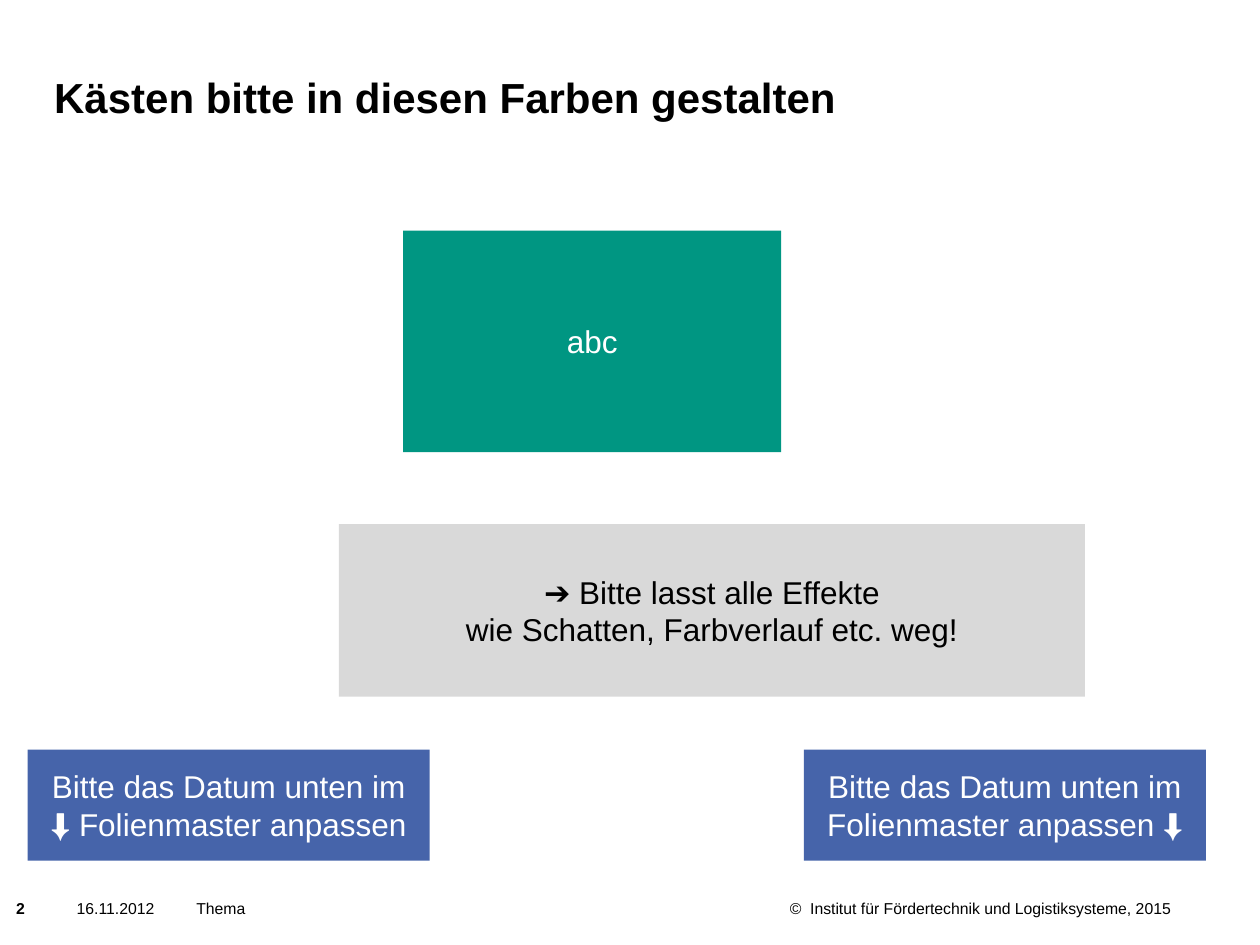
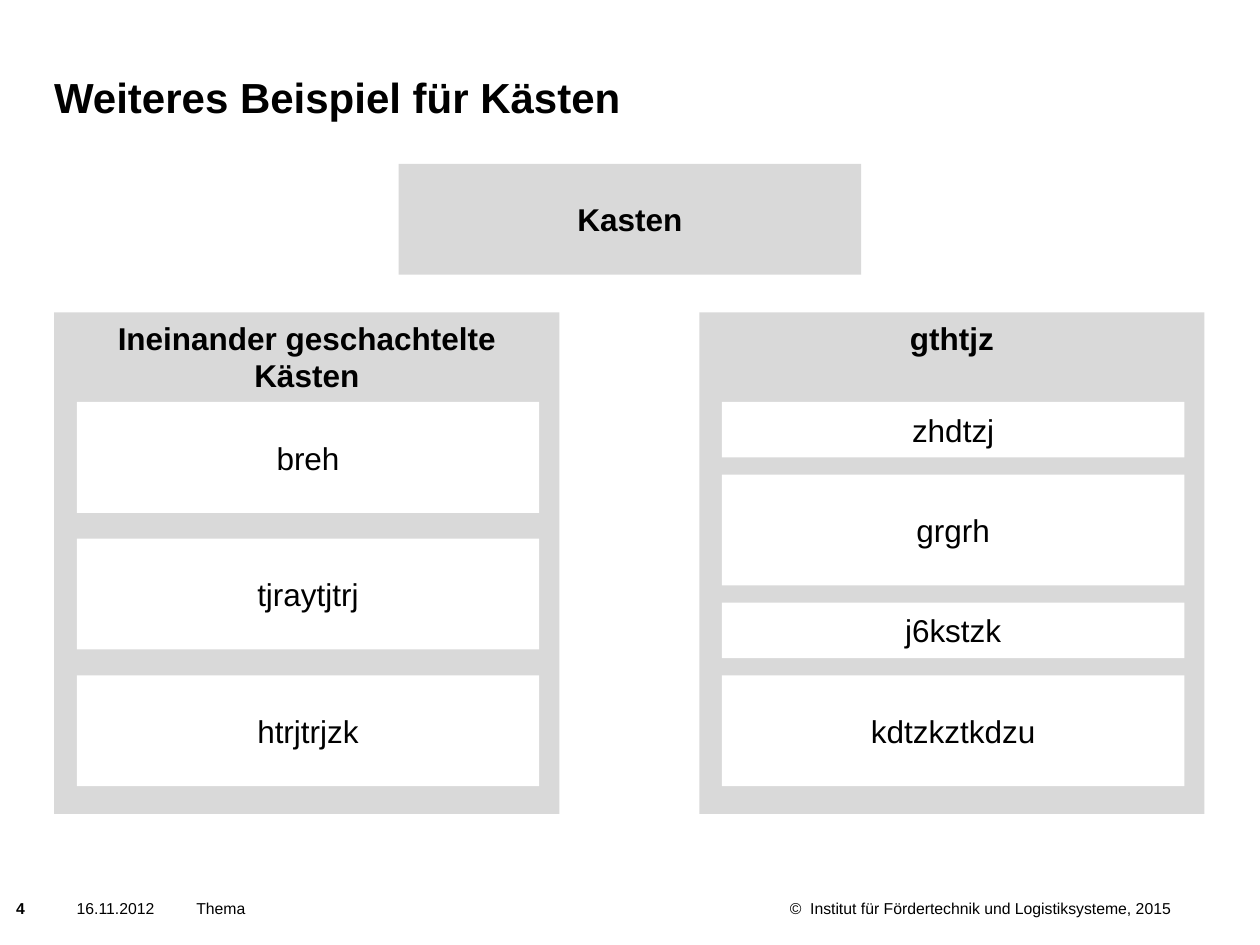
import dataclasses

import pptx
import pptx.dml.color
import pptx.enum.shapes
import pptx.enum.text
import pptx.util

# Grid: 100 columns by 75 rows, one cell is a tenth of an inch
CELL = pptx.util.Inches(0.1)
COLUMNS, ROWS = 100, 75

FONT = "Arial"
BLACK, WHITE, GREY = "000000", "FFFFFF", "D9D9D9"
GREEN, BLUE = "009682", "4664AA"
TITLE_SIZE, BODY_SIZE, FOOTER_SIZE = 24, 18, 9

# Sizes that the boxes share
BOX_WIDTH, BOX_HEIGHT = 36.7, 8.8
PANEL_INSET, PANEL_HEADER, PANEL_FOOT = 1.8, 7.1, 2.2

ANCHOR = pptx.enum.text.MSO_ANCHOR
ALIGN = pptx.enum.text.PP_ALIGN


@dataclasses.dataclass
class Box:
    left: float
    top: float
    width: float
    height: float

    def inner(self, left, top, width, height):
        return Box(self.left + left, self.top + top, width, height)

    def lengths(self):
        return [round(value * CELL)
                for value in (self.left, self.top, self.width, self.height)]


SLIDE = Box(0, 0, COLUMNS, ROWS)
TITLE = Box(4.3, 3.6, 75.6, 6.1)
FOOTER = Box(0, 70.8, COLUMNS, 2.5)


def color(hex_string):
    return pptx.dml.color.RGBColor.from_string(hex_string)


def write(shape, text, size, hex_string, bold=False, align=ALIGN.LEFT,
          anchor=ANCHOR.MIDDLE):
    frame = shape.text_frame
    frame.word_wrap = True
    frame.vertical_anchor = anchor
    frame.text = text
    for paragraph in frame.paragraphs:
        paragraph.alignment = align
        for run in paragraph.runs:
            run.font.name = FONT
            run.font.size = pptx.util.Pt(size)
            run.font.bold = bold
            run.font.color.rgb = color(hex_string)


def add_text(slide, box, text, size, bold=False, anchor=ANCHOR.MIDDLE):
    shape = slide.shapes.add_textbox(*box.lengths())
    write(shape, text, size, BLACK, bold, anchor=anchor)
    return shape


def add_box(slide, box, text, fill, text_color=BLACK, bold=False,
            anchor=ANCHOR.MIDDLE):
    shape = slide.shapes.add_shape(
        pptx.enum.shapes.MSO_SHAPE.RECTANGLE, *box.lengths())
    shape.shadow.inherit = False
    shape.fill.solid()
    shape.fill.fore_color.rgb = color(fill)
    shape.line.fill.background()
    write(shape, text, BODY_SIZE, text_color, bold, ALIGN.CENTER, anchor)


def add_title(slide, box, text):
    frame = add_text(slide, box, text, TITLE_SIZE, True, ANCHOR.BOTTOM).text_frame
    frame.margin_left = frame.margin_right = 0
    frame.margin_top = frame.margin_bottom = 0


def add_footer(slide, box, number):
    parts = [
        (0.3, 5.5, str(number), True),
        (5.1, 8.5, "16.11.2012", False),
        (14.6, 47.1, "Thema", False),
        (61.7, 33.6, "©  Institut für Fördertechnik und Logistiksysteme, 2015", False),
    ]
    for left, width, text, bold in parts:
        add_text(slide, box.inner(left, 0, width, box.height), text,
                 FOOTER_SIZE, bold)


def add_panel(slide, box, heading, entries):
    """Grey panel; entries are (text, share of the full box height)."""
    add_box(slide, box, heading, GREY, bold=True, anchor=ANCHOR.TOP)
    heights = [share * BOX_HEIGHT for _, share in entries]
    free = box.height - PANEL_HEADER - PANEL_FOOT - sum(heights)
    gap = free / (len(entries) - 1)
    top = PANEL_HEADER
    for (text, _), height in zip(entries, heights):
        add_box(slide, box.inner(PANEL_INSET, top, BOX_WIDTH, height), text, WHITE)
        top += height + gap


def new_slide(presentation, title, number):
    slide = presentation.slides.add_slide(presentation.slide_layouts[6])
    add_title(slide, TITLE, title)
    add_footer(slide, FOOTER, number)
    return slide


def add_color_boxes(slide, box):
    add_box(slide, box.inner(32, 18.3, 30, 17.6), "abc", GREEN, WHITE)
    add_box(slide, box.inner(26.9, 41.6, 59.2, 13.7),
            "➔ Bitte lasst alle Effekte\vwie Schatten, Farbverlauf etc. weg!", GREY)
    # Hints above the two ends of the footer
    hints = [
        (2.2, "Bitte das Datum unten im ⬇ Folienmaster anpassen"),
        (63.8, "Bitte das Datum unten im Folienmaster anpassen ⬇"),
    ]
    for left, text in hints:
        add_box(slide, box.inner(left, 59.5, 31.9, BOX_HEIGHT), text, BLUE, WHITE)


def add_nested_boxes(slide, box):
    centred = (box.width - BOX_WIDTH) / 2
    add_box(slide, box.inner(centred, 13, BOX_WIDTH, BOX_HEIGHT),
            "Kasten", GREY, bold=True)
    panels = [
        (4.3, "Ineinander geschachtelte Kästen",
         [("breh", 1), ("tjraytjtrj", 1), ("htrjtrjzk", 1)]),
        (55.5, "gthtjz",
         [("zhdtzj", 0.5), ("grgrh", 1), ("j6kstzk", 0.5), ("kdtzkztkdzu", 1)]),
    ]
    for left, heading, entries in panels:
        add_panel(slide, box.inner(left, 24.8, 40.1, 39.8), heading, entries)


def main():
    presentation = pptx.Presentation()
    presentation.slide_width = COLUMNS * CELL
    presentation.slide_height = ROWS * CELL
    add_color_boxes(
        new_slide(presentation, "Kästen bitte in diesen Farben gestalten", 2), SLIDE)
    add_nested_boxes(
        new_slide(presentation, "Weiteres Beispiel für Kästen", 4), SLIDE)
    presentation.save("out.pptx")


if __name__ == "__main__":
    main()
